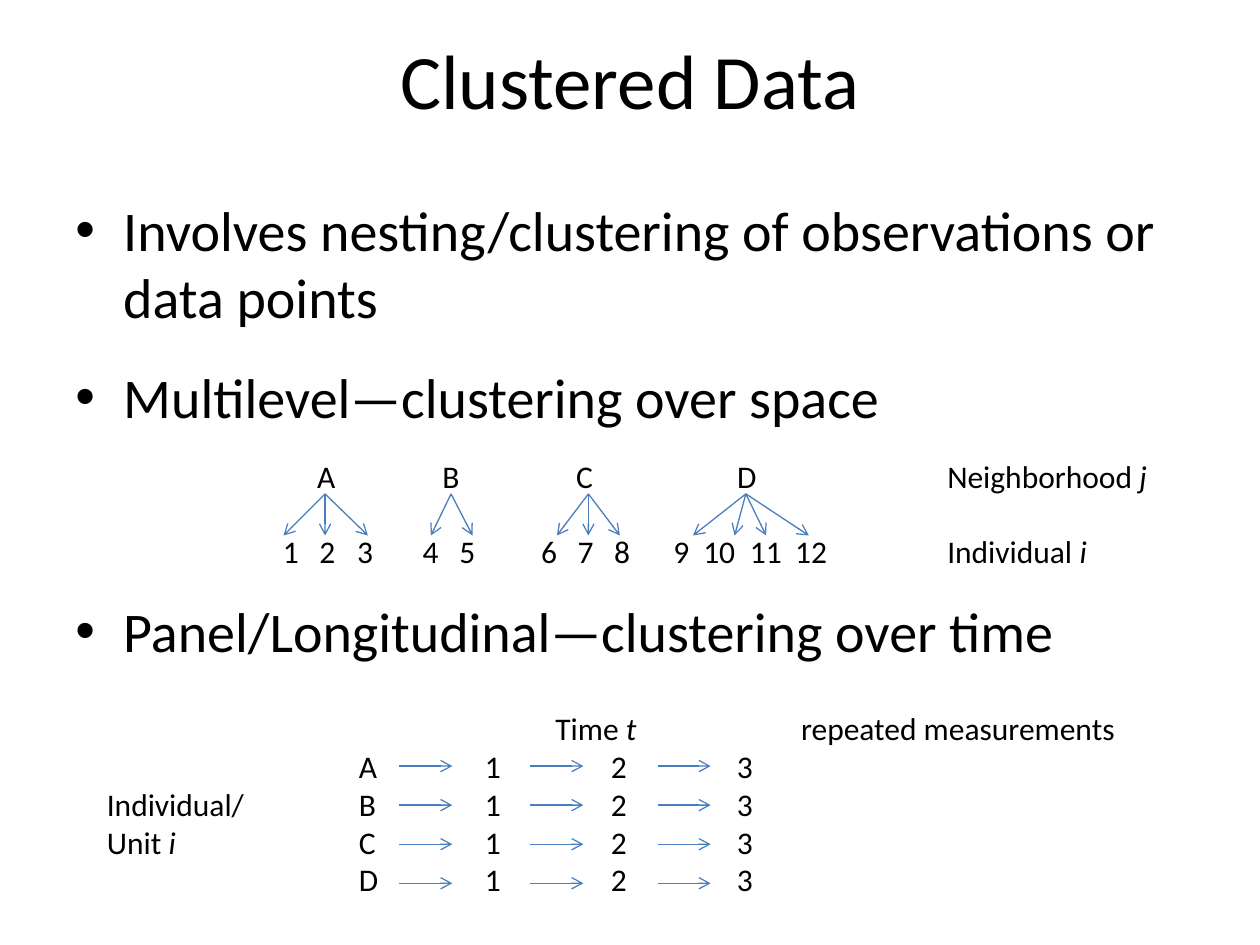
import pptx
import pptx.util
import pptx.dml.color
import pptx.enum.shapes
import pptx.enum.text
import pptx.oxml.ns
import lxml.etree

Inches = pptx.util.Inches
Pt = pptx.util.Pt
BLACK, BLUE = "000000", "4B7EBC"
FANS = {
    2.58: (2.25, 2.58, 2.92),
    3.58: (3.42, 3.75),
    4.67: (4.42, 4.67, 4.92),
    5.92: (5.5, 5.83, 6.08, 6.42),
}
GROUPS = (2.59, 3.58, 4.64, 5.93)
MEMBERS = (2.31, 2.6, 2.9, 3.42, 3.71, 4.36, 4.65, 4.94, 5.41, 5.71, 6.08, 6.44)
NOTE = 7.52


def color(code):
    """Turn a hex string into a colour."""
    return pptx.dml.color.RGBColor.from_string(code)


def node(parent, tag, **attrs):
    """Append a drawing element to a parent."""
    child = lxml.etree.SubElement(parent, pptx.oxml.ns.qn("a:" + tag))
    for key, value in attrs.items():
        child.set(key, str(value))
    return child


def style(para, size):
    """Format every run of a paragraph."""
    for run in para.runs:
        run.font.name = "Calibri"
        run.font.size = Pt(size)
        run.font.color.rgb = color(BLACK)


def write(para, text, size):
    """Write text in which asterisks enclose italics."""
    for i, part in enumerate(text.split("*")):
        if part:
            run = para.add_run()
            run.text = part
            run.font.italic = i % 2 == 1
    style(para, size)


def add_title(slide, text):
    """Place and format the slide title."""
    title = slide.shapes.title
    title.left, title.top = Inches(0.5), Inches(0)
    title.width, title.height = Inches(9), Inches(1.25)
    frame = title.text_frame
    frame.text = text
    frame.vertical_anchor = pptx.enum.text.MSO_ANCHOR.MIDDLE
    frame.paragraphs[0].alignment = pptx.enum.text.PP_ALIGN.CENTER
    style(frame.paragraphs[0], 44)


def add_box(slide, left, top, width, height):
    """Add a wrapping text box and return its frame."""
    box = slide.shapes.add_textbox(
        Inches(left), Inches(top), Inches(width), Inches(height))
    box.text_frame.word_wrap = True
    return box.text_frame


def add_bullets(slide, items):
    """Add the bullet list with its gaps in points."""
    frame = add_box(slide, 0.5, 1.5, 9, 4.95)
    frame.text = "\n".join(text for text, gap in items)
    for para, (text, gap) in zip(frame.paragraphs, items):
        para.space_before = Pt(gap)
        style(para, 32)
        props = para._p.get_or_add_pPr()
        props.set("marL", str(Inches(0.38)))
        props.set("indent", str(Inches(-0.38)))
        node(props, "buFont", typeface="Arial")
        node(props, "buChar", char="•")


def add_rows(slide, left, top, width, height, rows, gap=0):
    """Add tabbed lines, each with its own stops as slide positions."""
    frame = add_box(slide, left, top, width, height)
    for i, (text, stops) in enumerate(rows):
        para = frame.add_paragraph() if i else frame.paragraphs[0]
        para.space_before = Pt(gap if i else 0)
        write(para, text, 18)
        tabs = node(para._p.get_or_add_pPr(), "tabLst")
        for spot, align in stops:
            node(tabs, "tab", pos=Inches(spot - left - 0.1), algn=align)


def add_arrow(slide, x1, y1, x2, y2):
    """Draw a thin arrow."""
    line = slide.shapes.add_connector(
        pptx.enum.shapes.MSO_CONNECTOR.STRAIGHT,
        Inches(x1), Inches(y1), Inches(x2), Inches(y2))
    line.line.color.rgb = color(BLUE)
    line.line.width = Pt(0.75)
    node(line.line._get_or_add_ln(), "tailEnd", type="arrow")
    node(line._element.spPr, "effectLst")


def add_space(slide):
    """Draw the neighborhoods and their members."""
    count = len(MEMBERS)
    numbers = "".join(f"\t{n}" for n in range(1, count + 1))
    rows = [
        (text, [(x, "ctr") for x in spots] + [(NOTE, "l")])
        for text, spots in (
            ("\tA\tB\tC\tD\tNeighborhood *j*", GROUPS),
            (numbers + "\tIndividual *i*", MEMBERS))
    ]
    add_rows(slide, 1.42, 3.58, 7.83, 1.01, rows, 21)
    for start, ends in FANS.items():
        for end in ends:
            add_arrow(slide, start, 3.92, end, 4.25)


def add_time(slide):
    """Draw the units and their repeated measurements."""
    stops = [(x, "l") for x in (2.85, 3.85, 4.85, 5.85)]
    rows = [("\tTime *t*\trepeated measurements", [(4.41, "l"), (6.36, "l")])]
    heads = ("", "Individual/", "Unit *i*", "")
    for head, unit in zip(heads, "ABCD"):
        rows.append((f"{head}\t{unit}\t1\t2\t3", stops))
    add_rows(slide, 0.75, 5.58, 8.5, 1.62, rows)
    for x in (3.17, 4.21, 5.22):
        for i in range(4):
            y = 6.08 + 0.31 * i
            add_arrow(slide, x, y, x + 0.42, y)


def main():
    """Build and save the slide."""
    deck = pptx.Presentation()
    deck.slide_width, deck.slide_height = Inches(10), Inches(7.5)
    slide = deck.slides.add_slide(deck.slide_layouts[5])
    add_title(slide, "Clustered Data")
    add_bullets(slide, (
        ("Involves nesting/clustering of observations or data points", 0),
        ("Multilevel—clustering over space", 19),
        ("Panel/Longitudinal—clustering over time", 95)))
    add_space(slide)
    add_time(slide)
    deck.save("out.pptx")


if __name__ == "__main__":
    main()
